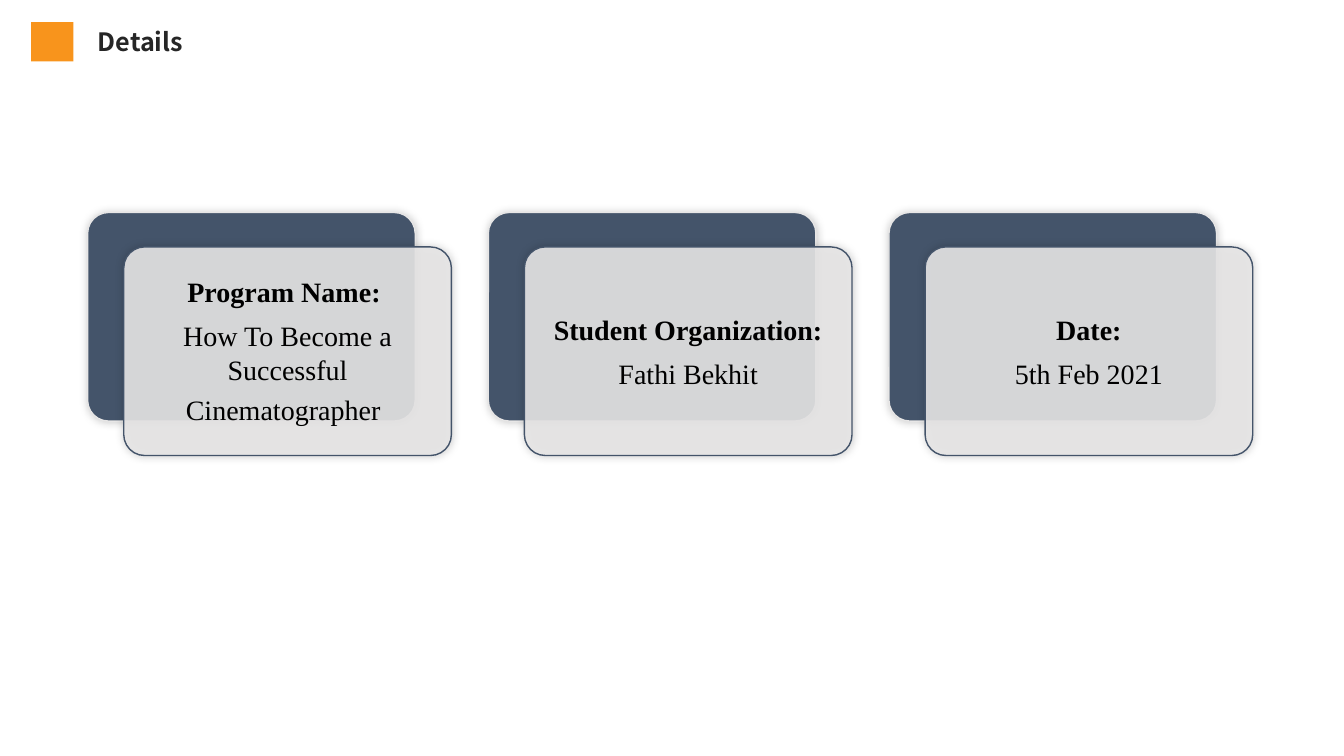
from lxml import etree
from pptx import Presentation
from pptx.dml.color import RGBColor
from pptx.enum.shapes import MSO_SHAPE
from pptx.enum.text import MSO_ANCHOR, MSO_AUTO_SIZE, PP_ALIGN
from pptx.oxml.ns import qn
from pptx.util import Pt

ROUNDED, RECTANGLE = MSO_SHAPE.ROUNDED_RECTANGLE, MSO_SHAPE.RECTANGLE
MIDDLE = MSO_ANCHOR.MIDDLE
NO_FIT = MSO_AUTO_SIZE.NONE
CENTER, LEFT = PP_ALIGN.CENTER, PP_ALIGN.LEFT

NAVY = RGBColor(0x44, 0x54, 0x6A)
PALE = RGBColor(0xE7, 0xE6, 0xE6)
ORANGE = RGBColor(0xF8, 0x94, 0x1C)
INK = RGBColor(0x26, 0x26, 0x26)
BLACK = RGBColor(0, 0, 0)
WHITE = RGBColor(255, 255, 255)

TITLE = "Details"
TITLE_FONT = {"name": "Noto Sans CJK SC", "size": Pt(18), "bold": True}
CARD_FONT = {"name": "Times New Roman", "size": Pt(20)}

# Each card is a list of paragraphs; each paragraph is a list of (text, format, color).
HEADING, VALUE = {"bold": True}, {"bold": False}
CARDS = [
    [[("Program Name: ", HEADING, BLACK)],
     [("How To Become a Successful Cinematographer", VALUE, BLACK),
      (" ", {"bold": False, "size": Pt(25)}, WHITE)]],
    [[("Student Organization:", HEADING, BLACK)],
     [("Fathi Bekhit", VALUE, BLACK)]],
    [[("Date:", HEADING, BLACK)],
     [("5th Feb 2021", VALUE, BLACK)]],
]

TITLE_MARKER_BOX = (22.3, 15.8, 30.2, 28.1)
CARD_LEFT, CARD_TOP = 62.6, 151.8
CARD_WIDTH, CARD_HEIGHT = 234, 149
CARD_PITCH = 286.2
FRONT_SHIFT_X, FRONT_SHIFT_Y = 25.8, 24.6


def apply_format(target, values):
    for name, value in values.items():
        setattr(target, name, value)


def add_filled_shape(slide, kind, box, color):
    shape = slide.shapes.add_shape(kind, *(Pt(length) for length in box))
    shape.shadow.inherit = False
    shape.fill.solid()
    shape.fill.fore_color.rgb = color
    shape.line.fill.background()
    return shape


def add_soft_shadow(shape):
    effects = shape._element.spPr.find(qn("a:effectLst"))
    shadow = etree.SubElement(effects, qn("a:outerShdw"),
                              blurRad=str(Pt(6)), dist="0", rotWithShape="0")
    color = etree.SubElement(shadow, qn("a:srgbClr"), val="000000")
    etree.SubElement(color, qn("a:alpha"), val="20000")


def add_panel(slide, left, top, fill, line):
    panel = add_filled_shape(slide, ROUNDED, (left, top, CARD_WIDTH, CARD_HEIGHT), fill)
    panel.adjustments[0] = 0.1
    panel.line.color.rgb = line
    panel.line.width = Pt(1)
    add_soft_shadow(panel)
    return panel


def write_card(panel, paragraphs):
    frame = panel.text_frame
    sides = ("margin_left", "margin_top", "margin_right", "margin_bottom")
    apply_format(frame, dict.fromkeys(sides, Pt(5.8)))
    apply_format(frame, {"word_wrap": True, "vertical_anchor": MIDDLE})
    for index, runs in enumerate(paragraphs):
        paragraph = frame.add_paragraph() if index else frame.paragraphs[0]
        apply_format(paragraph, {"alignment": CENTER, "space_after": Pt(7.5)})
        for text, values, color in runs:
            run = paragraph.add_run()
            run.text = text
            apply_format(run.font, {**CARD_FONT, **values})
            run.font.color.rgb = color


def add_card(slide, index, paragraphs):
    left = CARD_LEFT + index * CARD_PITCH
    add_panel(slide, left, CARD_TOP, NAVY, PALE)
    front = add_panel(slide, left + FRONT_SHIFT_X, CARD_TOP + FRONT_SHIFT_Y, PALE, NAVY)
    color = front._element.spPr.find(qn("a:solidFill")).find(qn("a:srgbClr"))
    etree.SubElement(color, qn("a:alpha"), val="90000")
    write_card(front, paragraphs)


def add_title(slide):
    title = slide.shapes.title
    apply_format(title, {"left": Pt(62.6), "top": Pt(15.2),
                         "width": Pt(230.4), "height": Pt(28.8)})
    frame = title.text_frame
    frame.text = TITLE
    apply_format(frame, {"word_wrap": True, "auto_size": NO_FIT, "vertical_anchor": MIDDLE})
    paragraph = frame.paragraphs[0]
    paragraph.alignment = LEFT
    font = paragraph.runs[0].font
    apply_format(font, TITLE_FONT)
    font.color.rgb = INK


def main():
    presentation = Presentation()
    apply_format(presentation, {"slide_width": Pt(960), "slide_height": Pt(540)})
    slide = presentation.slides.add_slide(presentation.slide_layouts.get_by_name("Title Only"))
    add_title(slide)
    for index, paragraphs in enumerate(CARDS):
        add_card(slide, index, paragraphs)
    add_filled_shape(slide, RECTANGLE, TITLE_MARKER_BOX, ORANGE)
    presentation.save("out.pptx")


if __name__ == "__main__":
    main()
